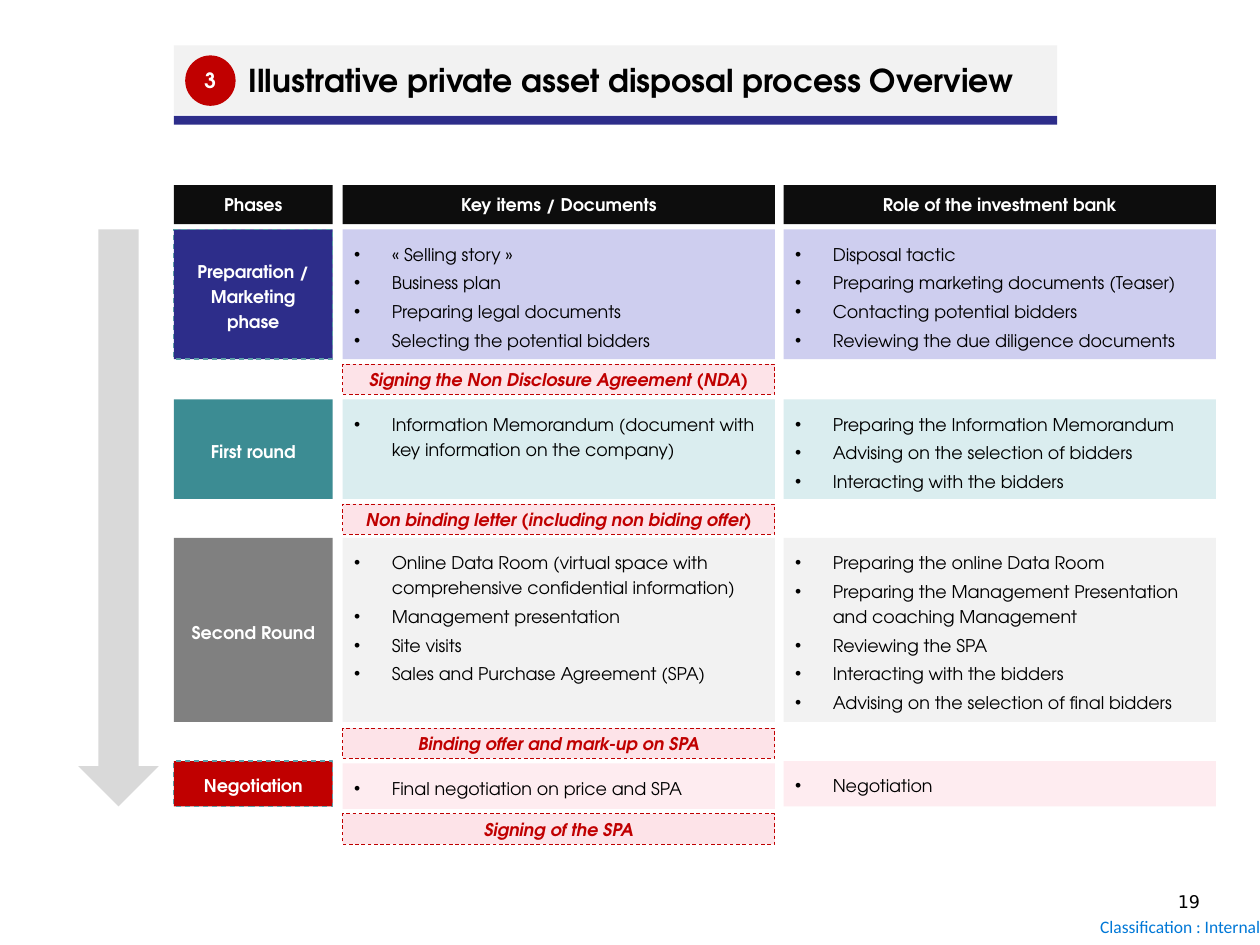
from lxml import etree
from pptx import Presentation
from pptx.dml.color import RGBColor
from pptx.enum.dml import MSO_LINE
from pptx.enum.shapes import MSO_SHAPE
from pptx.enum.text import MSO_ANCHOR, PP_ALIGN
from pptx.oxml.ns import qn
from pptx.util import Inches, Pt

RECTANGLE, OVAL, ARROW = MSO_SHAPE.RECTANGLE, MSO_SHAPE.OVAL, MSO_SHAPE.RIGHT_ARROW
LEFT, CENTER, RIGHT = PP_ALIGN.LEFT, PP_ALIGN.CENTER, PP_ALIGN.RIGHT
TOP, MIDDLE = MSO_ANCHOR.TOP, MSO_ANCHOR.MIDDLE
DASH = MSO_LINE.DASH

WHITE = RGBColor(0xFF, 0xFF, 0xFF)
BLACK = RGBColor(0x00, 0x00, 0x00)
HEADER_BLACK = RGBColor(0x0D, 0x0D, 0x0D)
NAVY = RGBColor(0x2D, 0x2D, 0x8A)
LAVENDER = RGBColor(0xCE, 0xCE, 0xEF)
TEAL = RGBColor(0x3C, 0x8C, 0x93)
PALE_TEAL = RGBColor(0xDA, 0xED, 0xEF)
GRAY = RGBColor(0x80, 0x80, 0x80)
PALE_GRAY = RGBColor(0xF2, 0xF2, 0xF2)
ARROW_GRAY = RGBColor(0xD9, 0xD9, 0xD9)
RED = RGBColor(0xC0, 0x00, 0x00)
PALE_RED = RGBColor(0xFE, 0xEC, 0xF0)
PINK = RGBColor(0xFA, 0xA4, 0xB6)
OUTLINE_TEAL = RGBColor(0x5D, 0x9E, 0xA7)
LINK_BLUE = RGBColor(0x00, 0x78, 0xD7)

MAIN_FONT = "TeX Gyre Adventor"
PHASE_X, PHASE_W = 1.38, 1.26
ITEMS_X, ROLE_X, DETAIL_W = 2.72, 6.22, 3.43
HEADER_Y, HEADER_H = 1.47, 0.31
MILESTONE_H = 0.24
FLOW_TOP, FLOW_BOTTOM, FLOW_CENTER, FLOW_W = 1.82, 6.4, 0.94, 0.64

HEADERS = [
    ("Phases", PHASE_X, PHASE_W),
    ("Key items / Documents", ITEMS_X, DETAIL_W),
    ("Role of the investment bank", ROLE_X, DETAIL_W),
]

PHASES = [
    {"name": "Preparation / Marketing phase", "top": 1.82, "items_top": 1.82,
     "height": 1.03, "color": NAVY, "tint": LAVENDER, "outline": OUTLINE_TEAL,
     "items": ["«\u00a0Selling story\u00a0»", "Business plan",
               "Preparing legal documents", "Selecting the potential bidders"],
     "roles": ["Disposal tactic", "Preparing marketing documents (Teaser)",
               "Contacting potential bidders",
               "Reviewing the due diligence documents"],
     "milestone": ("Signing the Non Disclosure Agreement (NDA)", 2.89)},
    {"name": "First round", "top": 3.17, "items_top": 3.17,
     "height": 0.79, "color": TEAL, "tint": PALE_TEAL, "outline": None,
     "items": ["Information Memorandum (document with key information on the company)"],
     "roles": ["Preparing the Information Memorandum",
               "Advising on the selection of bidders",
               "Interacting with the bidders"],
     "milestone": ("Non binding letter (including non biding offer)", 4)},
    {"name": "Second Round", "top": 4.27, "items_top": 4.27,
     "height": 1.46, "color": GRAY, "tint": PALE_GRAY, "outline": None,
     "items": ["Online Data Room (virtual space with comprehensive confidential information)",
               "Management presentation", "Site visits",
               "Sales and Purchase Agreement (SPA)"],
     "roles": ["Preparing the online Data Room",
               "Preparing the Management Presentation and coaching Management",
               "Reviewing the SPA", "Interacting with the bidders",
               "Advising on the selection of final bidders"],
     "milestone": ("Binding offer and mark-up on SPA", 5.78)},
    {"name": "Negotiation", "top": 6.04, "items_top": 6.06,
     "height": 0.36, "color": RED, "tint": PALE_RED, "outline": OUTLINE_TEAL,
     "items": ["Final negotiation on price and SPA"],
     "roles": ["Negotiation"],
     "milestone": ("Signing of the SPA", 6.46)},
]


def add_block(slide, x, y, w, h, color, kind=RECTANGLE, outline=None,
              outline_width=0.75, opacity=None):
    block = slide.shapes.add_shape(kind, Inches(x), Inches(y), Inches(w), Inches(h))
    block.shadow.inherit = False
    block.fill.solid()
    block.fill.fore_color.rgb = color
    if opacity is not None:
        fill_color = block.element.spPr.find(f"{qn('a:solidFill')}/{qn('a:srgbClr')}")
        etree.SubElement(fill_color, qn("a:alpha"), val=str(opacity * 1000))
    if outline is None:
        block.line.fill.background()
    else:
        block.line.color.rgb = outline
        block.line.width = Pt(outline_width)
        block.line.dash_style = DASH
    return block


def set_indent(paragraph, left, first=0):
    properties = paragraph._p.get_or_add_pPr()
    properties.set("marL", str(Inches(left)))
    properties.set("indent", str(Inches(first)))
    return properties


def write_text(holder, lines, size=10, color=BLACK, font=MAIN_FONT, bold=False,
               italic=False, align=CENTER, anchor=MIDDLE, insets=(0.09, 0.08),
               wrap=True, spacing=None, gap=0, indent=0, bullets=False):
    frame = holder.text_frame
    frame.word_wrap = wrap
    frame.vertical_anchor = anchor
    frame.margin_left = frame.margin_right = Inches(insets[0])
    frame.margin_top = frame.margin_bottom = Inches(insets[1])
    for index, line in enumerate(lines):
        paragraph = frame.add_paragraph() if index else frame.paragraphs[0]
        paragraph.alignment = align
        if spacing:
            paragraph.line_spacing = spacing
        if index:
            paragraph.space_before = Pt(gap)
        paragraph.space_after = Pt(gap)
        if bullets:
            properties = set_indent(paragraph, 0.3, -0.3)
            etree.SubElement(properties, qn("a:buFont"), typeface="Arial")
            etree.SubElement(properties, qn("a:buChar"), char="•")
        elif indent:
            set_indent(paragraph, indent)
        run = paragraph.add_run()
        run.text = line
        run.font.size = Pt(size)
        run.font.name = font
        run.font.color.rgb = color
        run.font.bold = bold
        run.font.italic = italic


def add_label(slide, x, y, w, h, text, **text_format):
    label = slide.shapes.add_textbox(Inches(x), Inches(y), Inches(w), Inches(h))
    write_text(label, [text], **text_format)


def add_title(slide):
    add_block(slide, PHASE_X, 0.92, 7.01, 0.07, NAVY)
    title = add_block(slide, PHASE_X, 0.36, 7.01, 0.55, PALE_GRAY)
    write_text(title, ["Illustrative private asset disposal process Overview"],
               size=18, bold=True, insets=(0.1, 0.05), indent=0.25)
    section_number = add_block(slide, 1.47, 0.44, 0.4, 0.4, RED, kind=OVAL)
    write_text(section_number, ["3"], size=12, color=WHITE, bold=True,
               insets=(0.04, 0.04), wrap=False)


def add_flow_arrow(slide):
    length = FLOW_BOTTOM - FLOW_TOP
    middle = (FLOW_TOP + FLOW_BOTTOM) / 2
    flow = add_block(slide, FLOW_CENTER - length / 2, middle - FLOW_W / 2,
                     length, FLOW_W, ARROW_GRAY, kind=ARROW)
    flow.rotation = 90


def add_details(slide, x, y, height, tint, lines):
    details = add_block(slide, x, y, DETAIL_W, height, tint)
    write_text(details, lines, align=LEFT, anchor=TOP, spacing=1.2, gap=1, bullets=True)


def add_phase(slide, phase):
    height, tint = phase["height"], phase["tint"]
    heading = add_block(slide, PHASE_X, phase["top"], PHASE_W, height,
                        phase["color"], outline=phase["outline"])
    write_text(heading, [phase["name"]], color=WHITE, bold=True, spacing=1.2)
    add_details(slide, ITEMS_X, phase["items_top"], height, tint, phase["items"])
    add_details(slide, ROLE_X, phase["top"], height, tint, phase["roles"])
    text, top = phase["milestone"]
    milestone = add_block(slide, ITEMS_X, top, DETAIL_W, MILESTONE_H, PINK,
                          outline=RED, outline_width=0.5, opacity=30)
    write_text(milestone, [text], color=RED, bold=True, italic=True, insets=(0.08, 0.08))


def main():
    deck = Presentation()
    deck.slide_width, deck.slide_height = Inches(10), Inches(7.5)
    slide = deck.slides.add_slide(deck.slide_layouts[6])
    add_title(slide)
    for text, x, width in HEADERS:
        header = add_block(slide, x, HEADER_Y, width, HEADER_H, HEADER_BLACK)
        write_text(header, [text], color=WHITE, bold=True, insets=(0.09, 0.09))
    for phase in PHASES:
        add_phase(slide, phase)
    add_flow_arrow(slide)
    add_label(slide, 9.25, 7.02, 0.39, 0.31, "19", font="DejaVu Sans",
              align=LEFT, anchor=TOP, insets=(0.1, 0.05))
    add_label(slide, 8.4, 7.21, 1.6, 0.29, "Classification : Internal",
              font="Calibri", color=LINK_BLUE, align=RIGHT, insets=(0, 0))
    deck.save("out.pptx")


if __name__ == "__main__":
    main()
